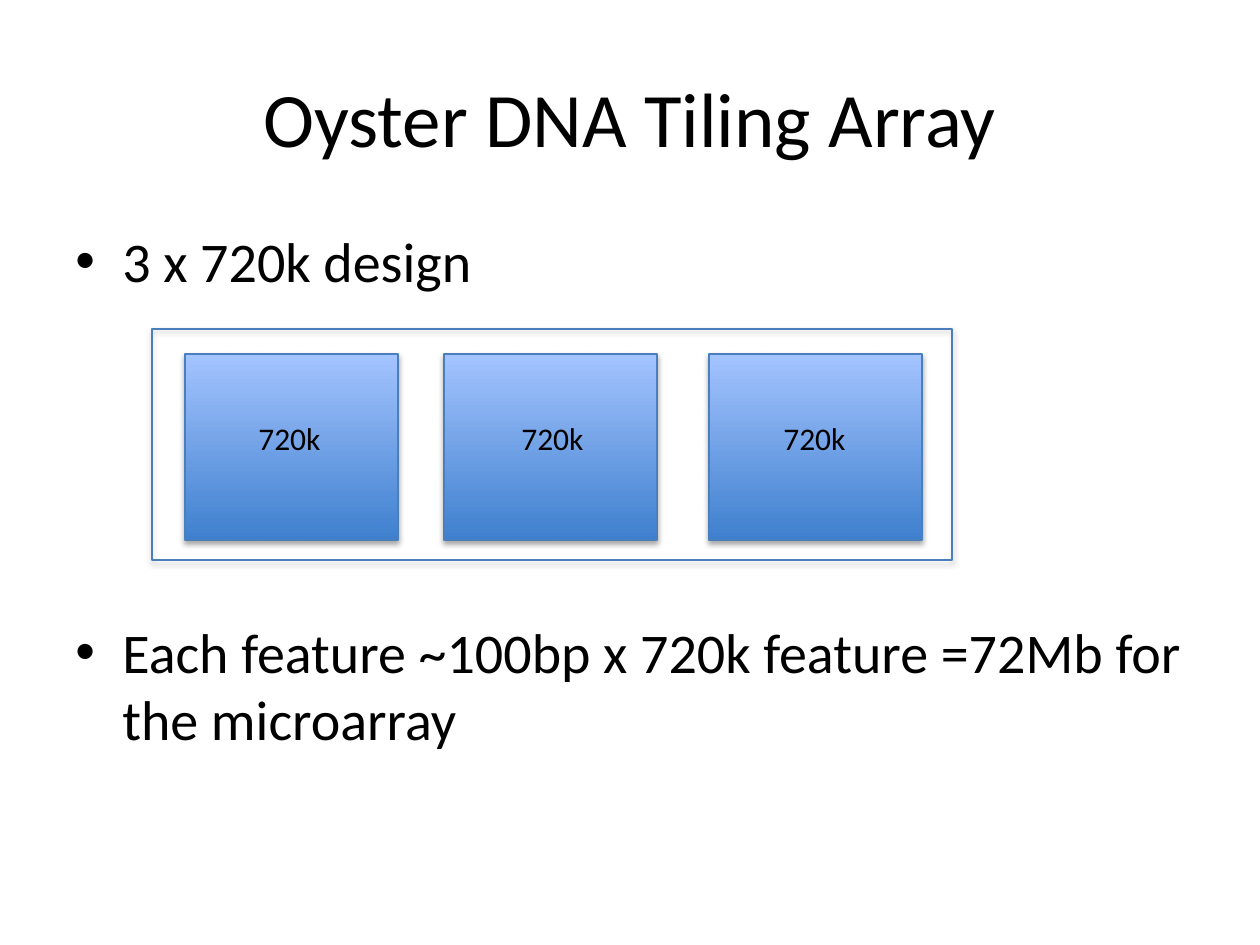
from lxml import etree
from pptx import Presentation
from pptx.dml.color import RGBColor
from pptx.enum.shapes import MSO_SHAPE
from pptx.enum.text import MSO_ANCHOR, PP_ALIGN
from pptx.oxml import parse_xml
from pptx.oxml.ns import nsdecls, qn
from pptx.util import Emu, Pt

BLACK = RGBColor(0x00, 0x00, 0x00)
OUTLINE = RGBColor(0x4B, 0x7E, 0xBC)
DEEP_BLUE = RGBColor(0x3F, 0x80, 0xCE)
LIGHT_BLUE = RGBColor(0xA4, 0xC4, 0xFF)
FONT = "Calibri"
PX_PER_INCH = 126

# Left edges of each array block and of its label
BLOCKS = [(185, 246), (444, 509), (709, 771)]


def px(*lengths):
    return [Emu(round(length * 914400 / PX_PER_INCH)) for length in lengths]


def style_paragraph(paragraph, text, size):
    paragraph.text = text
    paragraph.font.name = FONT
    paragraph.font.size = Pt(size)
    paragraph.font.color.rgb = BLACK


def set_title(slide, text, box):
    title = slide.shapes.title
    title.left, title.top, title.width, title.height = px(*box)
    title.text_frame.vertical_anchor = MSO_ANCHOR.MIDDLE
    paragraph = title.text_frame.paragraphs[0]
    style_paragraph(paragraph, text, 44)
    paragraph.alignment = PP_ALIGN.CENTER


def add_text(slide, box):
    frame = slide.shapes.add_textbox(*px(*box)).text_frame
    frame.word_wrap = True
    return frame


def add_bullets(slide, items, box):
    frame = add_text(slide, box)
    for index, (text, space_before) in enumerate(items):
        paragraph = frame.add_paragraph() if index else frame.paragraphs[0]
        style_paragraph(paragraph, text, 32)
        paragraph.space_before = Pt(space_before)
        properties = paragraph._p.get_or_add_pPr()
        indent = px(47)[0]
        properties.set("marL", str(indent))
        properties.set("indent", str(-indent))
        bullet_font = etree.SubElement(properties, qn("a:buFont"))
        bullet_font.set("typeface", "Arial")
        etree.SubElement(properties, qn("a:buChar")).set("char", "•")
        # Bullet elements come before the default run properties
        properties.append(properties.find(qn("a:defRPr")))


def add_shadow(shape):
    shape.shadow.inherit = False
    effects = shape._element.spPr.find(qn("a:effectLst"))
    effects.append(parse_xml(
        f'<a:outerShdw {nsdecls("a")} blurRad="40000" dist="23000" '
        'dir="5400000" rotWithShape="0"><a:srgbClr val="000000">'
        '<a:alpha val="35000"/></a:srgbClr></a:outerShdw>'))


def add_rectangle(slide, box, gradient=None):
    shape = slide.shapes.add_shape(MSO_SHAPE.RECTANGLE, *px(*box))
    if gradient:
        shape.fill.gradient()
        shape.fill.gradient_angle = 90
        for stop, color in zip(shape.fill.gradient_stops, gradient):
            stop.color.rgb = color
    else:
        shape.fill.background()
    shape.line.color.rgb = OUTLINE
    shape.line.width = Pt(0.75)
    add_shadow(shape)


def main():
    presentation = Presentation()
    presentation.slide_width, presentation.slide_height = px(1260, 945)
    slide = presentation.slides.add_slide(presentation.slide_layouts[5])

    # Title and bullets, with room for the array between the bullets
    set_title(slide, "Oyster DNA Tiling Array", (63, 38, 1134, 157))
    add_bullets(slide, [
        ("3 x 720k design", 0),
        ("Each feature ~100bp x 720k feature =72Mb for the microarray", 185),
    ], (63, 220, 1134, 624))

    # Array frame and its blocks
    add_rectangle(slide, (152, 329, 800, 231))
    for left, _ in BLOCKS:
        add_rectangle(slide, (left, 354, 213, 186), (DEEP_BLUE, LIGHT_BLUE))

    # Block labels
    for _, left in BLOCKS:
        frame = add_text(slide, (left, 413, 100, 51))
        style_paragraph(frame.paragraphs[0], "720k", 18)

    presentation.save("out.pptx")


if __name__ == "__main__":
    main()
